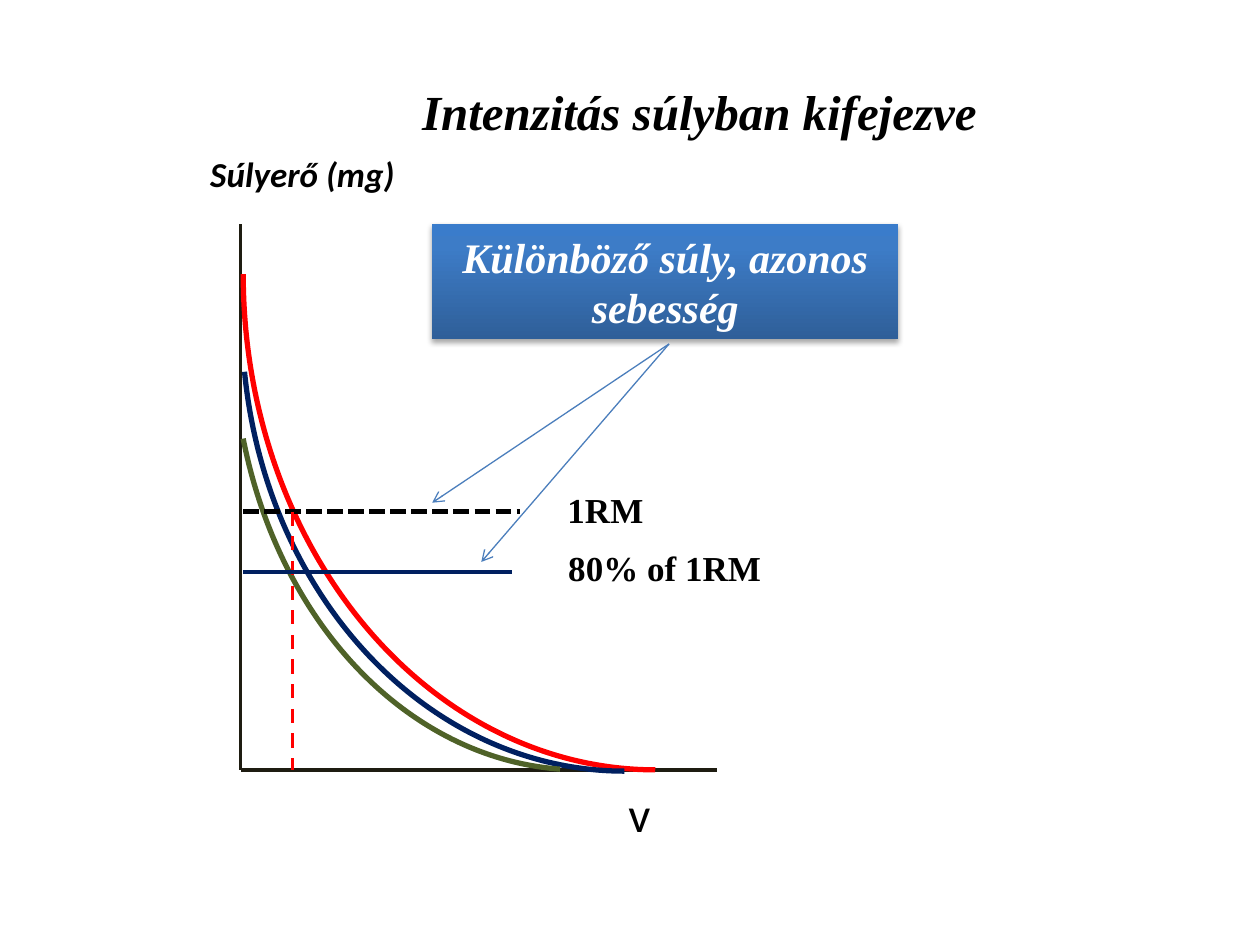
from lxml import etree
from pptx import Presentation
from pptx.dml.color import RGBColor
from pptx.enum.dml import MSO_LINE
from pptx.enum.shapes import MSO_CONNECTOR, MSO_SHAPE
from pptx.enum.text import MSO_ANCHOR, PP_ALIGN
from pptx.oxml import parse_xml
from pptx.oxml.ns import nsdecls, qn
from pptx.util import Inches, Pt

BLACK = RGBColor(0x00, 0x00, 0x00)
WHITE = RGBColor(0xFF, 0xFF, 0xFF)
AXIS = RGBColor(0x1E, 0x1C, 0x11)
RED = RGBColor(0xFF, 0x00, 0x00)
NAVY = RGBColor(0x00, 0x20, 0x60)
GREEN = RGBColor(0x4F, 0x62, 0x28)
ARROW_BLUE = RGBColor(0x4B, 0x7E, 0xBC)
BOX_DARK = RGBColor(0x2F, 0x5F, 0x99)
BOX_MIDDLE = RGBColor(0x3D, 0x7C, 0xC7)
BOX_LIGHT = RGBColor(0x3A, 0x7C, 0xCB)

SERIF = "Times New Roman"
SANS = "Calibri"


def write_text(shape, text, size=20, font=SERIF, color=BLACK, bold=True, italic=False):
    frame = shape.text_frame
    frame.word_wrap = True
    paragraph = frame.paragraphs[0]
    paragraph.alignment = PP_ALIGN.CENTER
    run = paragraph.add_run()
    run.text = text
    run.font.size = Pt(size)
    run.font.name = font
    run.font.bold = bold
    run.font.italic = italic
    run.font.color.rgb = color


class DiagramSlide:
    """Holds the slide and draws each kind of element on it."""

    def __init__(self, presentation):
        self.slide = presentation.slides.add_slide(presentation.slide_layouts[6])
        self.shapes = self.slide.shapes

    def line(self, start, end, color, width, dash=None, arrow=False):
        connector = self.shapes.add_connector(
            MSO_CONNECTOR.STRAIGHT, *map(Inches, start + end))
        connector.line.color.rgb = color
        connector.line.width = Pt(width)
        if dash:
            connector.line.dash_style = dash
        if arrow:
            etree.SubElement(connector.line._get_or_add_ln(), qn("a:tailEnd"), type="arrow")
        etree.SubElement(connector._element.spPr, qn("a:effectLst"))

    def curve(self, left, top, width, height, color, start_angle=270, end_angle=0):
        arc = self.shapes.add_shape(
            MSO_SHAPE.ARC, *map(Inches, (left, top, width, height)))
        arc.rotation = 180
        # One degree is 60000 units, and adjustments count in 100000 units
        arc.adjustments[0] = start_angle * 0.6
        arc.adjustments[1] = end_angle * 0.6
        arc.shadow.inherit = False
        arc.fill.background()
        arc.line.color.rgb = color
        arc.line.width = Pt(3)

    def label(self, left, top, width, height, text, **text_format):
        box = self.shapes.add_textbox(*map(Inches, (left, top, width, height)))
        write_text(box, text, **text_format)

    def gradient_box(self, left, top, width, height, stops, text, **text_format):
        box = self.shapes.add_shape(
            MSO_SHAPE.RECTANGLE, *map(Inches, (left, top, width, height)))
        box.line.fill.background()
        stop_xml = "".join(
            f'<a:gs pos="{percent * 1000}"><a:srgbClr val="{color}"/></a:gs>'
            for percent, color in stops)
        gradient = parse_xml(
            f'<a:gradFill {nsdecls("a")} rotWithShape="1"><a:gsLst>{stop_xml}</a:gsLst>'
            '<a:lin ang="16200000" scaled="0"/></a:gradFill>')
        properties = box._element.spPr
        properties.find(qn("a:prstGeom")).addnext(gradient)
        properties.append(parse_xml(
            f'<a:effectLst {nsdecls("a")}>'
            f'<a:outerShdw blurRad="{Pt(3.1)}" dist="{Pt(1.8)}" dir="5400000" rotWithShape="0">'
            '<a:srgbClr val="000000"><a:alpha val="35000"/></a:srgbClr>'
            '</a:outerShdw></a:effectLst>'))
        box.text_frame.vertical_anchor = MSO_ANCHOR.MIDDLE
        write_text(box, text, **text_format)


def main():
    presentation = Presentation()
    presentation.slide_width = Inches(10)
    presentation.slide_height = Inches(7.5)
    diagram = DiagramSlide(presentation)

    # Axes
    origin = (1.91, 6.11)
    diagram.line((1.91, 1.78), origin, AXIS, 2)
    diagram.line(origin, (5.69, 6.11), AXIS, 2)

    # Force-velocity curves
    diagram.curve(1.93, -1.76, 6.54, 7.87, RED)
    diagram.curve(1.92, -1.04, 6.07, 7.16, NAVY, end_angle=352.25)
    diagram.curve(1.85, -0.8, 5.51, 6.91, GREEN, start_angle=272.66, end_angle=342.85)

    # Load levels and the shared velocity
    diagram.line((1.93, 4.06), (4.13, 4.06), BLACK, 3, dash=MSO_LINE.SQUARE_DOT)
    diagram.line((2.32, 4.06), (2.32, 6.11), RED, 2, dash=MSO_LINE.DASH)
    diagram.line((1.93, 4.54), (4.06, 4.54), NAVY, 2)

    # Title and labels
    diagram.label(2.32, 0.6, 6.46, 0.57, "Intenzitás súlyban kifejezve", size=28, italic=True)
    diagram.label(1.14, 1.16, 2.52, 0.44, "Súlyerő (mg)", font=SANS, italic=True)
    diagram.label(4.76, 6.17, 0.63, 0.57, "v", size=28, font=SANS, bold=False)
    diagram.label(4.37, 3.83, 0.87, 0.44, "1RM")
    diagram.label(4.37, 4.29, 1.81, 0.44, "80% of 1RM")

    # Callout with arrows to both load levels
    diagram.gradient_box(
        3.43, 1.78, 3.7, 0.91,
        [(0, BOX_DARK), (80, BOX_MIDDLE), (100, BOX_LIGHT)],
        "Különböző súly, azonos sebesség", size=24, color=WHITE, italic=True)
    for target in ((3.43, 3.99), (3.82, 4.46)):
        diagram.line((5.31, 2.73), target, ARROW_BLUE, 0.75, arrow=True)

    presentation.save("out.pptx")


if __name__ == "__main__":
    main()
